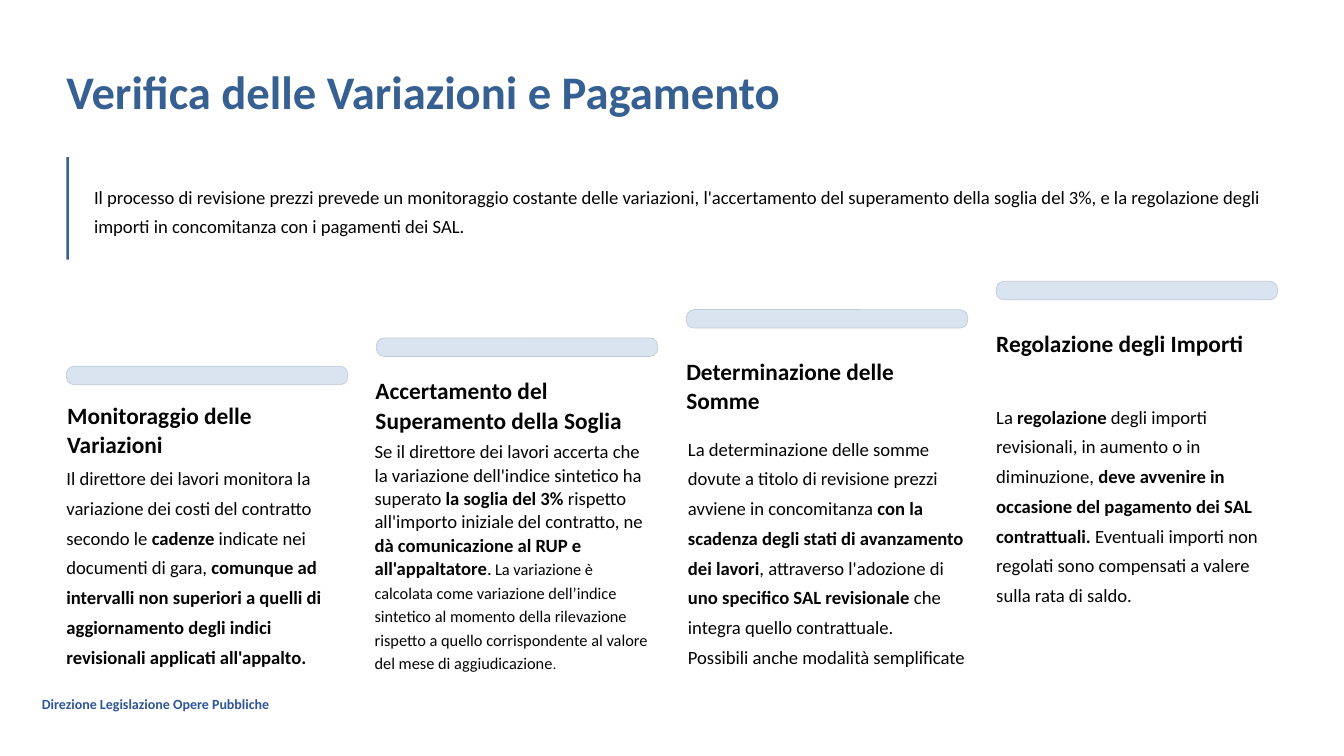
from pptx import Presentation
from pptx.dml.color import RGBColor
from pptx.enum import shapes, text
from pptx.util import Inches, Pt

HUES = {"title": "376092", "foot": "2F5597", "ink": "030303",
        "bar": "DAE4F1", "edge": "C0CAD7"}


class Deck:
    """Holds the style and the current slide, and draws its elements."""

    def __init__(self, font, hues):
        self.font, self.hues = font, hues
        self.prs = Presentation()
        self.prs.slide_width, self.prs.slide_height = Inches(16), Inches(9)
        self.slide = self.prs.slides.add_slide(self.prs.slide_layouts[5])

    def hue(self, name):
        return RGBColor.from_string(self.hues[name])

    def fill(self, box, paras, size, hue="ink", bold=False, lead=None, inset=0):
        frame = box.text_frame
        look = {"word_wrap": True, "auto_size": text.MSO_AUTO_SIZE.NONE,
                "vertical_anchor": text.MSO_ANCHOR.TOP}
        if inset is not None:
            for side in ("left", "top", "right", "bottom"):
                look["margin_" + side] = Inches(inset)
        for key, value in look.items():
            setattr(frame, key, value)
        for num, parts in enumerate(paras):
            para = frame.add_paragraph() if num else frame.paragraphs[0]
            para.alignment = text.PP_ALIGN.LEFT
            if lead:
                para.line_spacing = Pt(lead)
            for words, points in parts:
                for turn, piece in enumerate(words.split("**")):
                    if piece:
                        self.run(para, piece, points or size, hue, bold or turn % 2 == 1)

    def run(self, para, words, size, hue, bold):
        run = para.add_run()
        run.text = words
        for key, value in {"name": self.font, "size": Pt(size), "bold": bold}.items():
            setattr(run.font, key, value)
        run.font.color.rgb = self.hue(hue)

    def title(self, words, area, **style):
        box = self.slide.shapes.title
        for key, value in zip(("left", "top", "width", "height"), area):
            setattr(box, key, Inches(value))
        self.fill(box, [[(words, None)]], **style)

    def text(self, paras, area, **style):
        box = self.slide.shapes.add_textbox(*map(Inches, area))
        self.fill(box, paras, **style)

    def block(self, kind, area, hue, edge=None, curve=None):
        box = self.slide.shapes.add_shape(kind, *map(Inches, area))
        box.shadow.inherit = False
        box.fill.solid()
        box.fill.fore_color.rgb = self.hue(hue)
        if curve:
            box.adjustments[0] = curve
        if edge:
            box.line.color.rgb = self.hue(edge)
            box.line.width = Pt(0.6)
        else:
            box.line.fill.background()


STEPS = [
    ("Monitoraggio delle Variazioni", (0.8, 4.76, 3.35, 0.7),
     [[("Il direttore dei lavori monitora la variazione dei costi del contratto "
        "secondo le **cadenze** indicate nei documenti di gara, **comunque ad "
        "intervalli non superiori a quelli di aggiornamento degli indici "
        "revisionali applicati all'appalto.**", None)]],
     (0.79, 5.47, 3.35, 2.51), 25.5),
    ("Accertamento del Superamento della Soglia", (4.47, 4.47, 3.35, 1.05),
     [[("Se il direttore dei lavori accerta che la variazione dell'indice "
        "sintetico ha superato **la soglia del 3% **rispetto all'importo iniziale "
        "del contratto, ne **dà comunicazione al RUP e all'appaltatore**.", None),
       (" ", 12.5),
       ("La variazione è calcolata come variazione dell’indice sintetico al "
        "momento della rilevazione rispetto a quello corrispondente al valore "
        "del mese di aggiudicazione", 14),
       (".", 12)]],
     (4.46, 5.23, 3.27, 3.3), 20),
    ("Determinazione delle Somme", (8.17, 4.24, 3.35, 0.7),
     [[("La determinazione delle somme dovute a titolo di revisione prezzi "
        "avviene in concomitanza **con la scadenza degli stati di avanzamento dei "
        "lavori**, attraverso l'adozione di **uno specifico SAL revisionale **che "
        "integra quello contrattuale.", None)],
      [("Possibili anche modalità semplificate", None)]],
     (8.19, 5.12, 3.35, 2.87), 25.5),
    ("Regolazione degli Importi", (11.86, 3.91, 3.35, 0.7),
     [[("La **regolazione** degli importi revisionali, in aumento o in diminuzione, "
        "**deve avvenire in occasione del pagamento dei SAL contrattuali. **"
        "Eventuali importi non regolati sono compensati a valere sulla rata di "
        "saldo.", None)]],
     (11.86, 4.74, 3.35, 2.87), 25.5),
]


def main():
    deck = Deck("Calibri", HUES)
    kinds = shapes.MSO_SHAPE
    deck.text([[("Direzione Legislazione Opere Pubbliche", None)]],
              (0.4, 8.23, 6.66, 0.3), size=12, hue="foot", bold=True, inset=None)
    deck.title("Verifica delle Variazioni e Pagamento", (0.79, 0.72, 10.18, 0.7),
               size=40, hue="title", bold=True, lead=50)
    deck.text([[("Il processo di revisione prezzi prevede un monitoraggio costante "
                 "delle variazioni, l'accertamento del superamento della soglia del "
                 "3%, e la regolazione degli importi in concomitanza con i pagamenti "
                 "dei SAL.", None)]],
              (1.12, 2.12, 14.09, 0.72), size=16, lead=25.5)
    deck.block(kinds.RECTANGLE, (0.79, 1.87, 0.03, 1.22), "title")
    for num, (head, spot, body, area, lead) in enumerate(STEPS):
        bar = (0.79 + 3.69 * num, 4.36 - 0.337 * num, 3.35, 0.22)
        deck.block(kinds.ROUNDED_RECTANGLE, bar, "bar", "edge", 0.42)
        deck.text([[(head, None)]], spot, size=20, bold=True, lead=25)
        deck.text(body, area, size=16, lead=lead)
    deck.prs.save("out.pptx")


if __name__ == "__main__":
    main()
